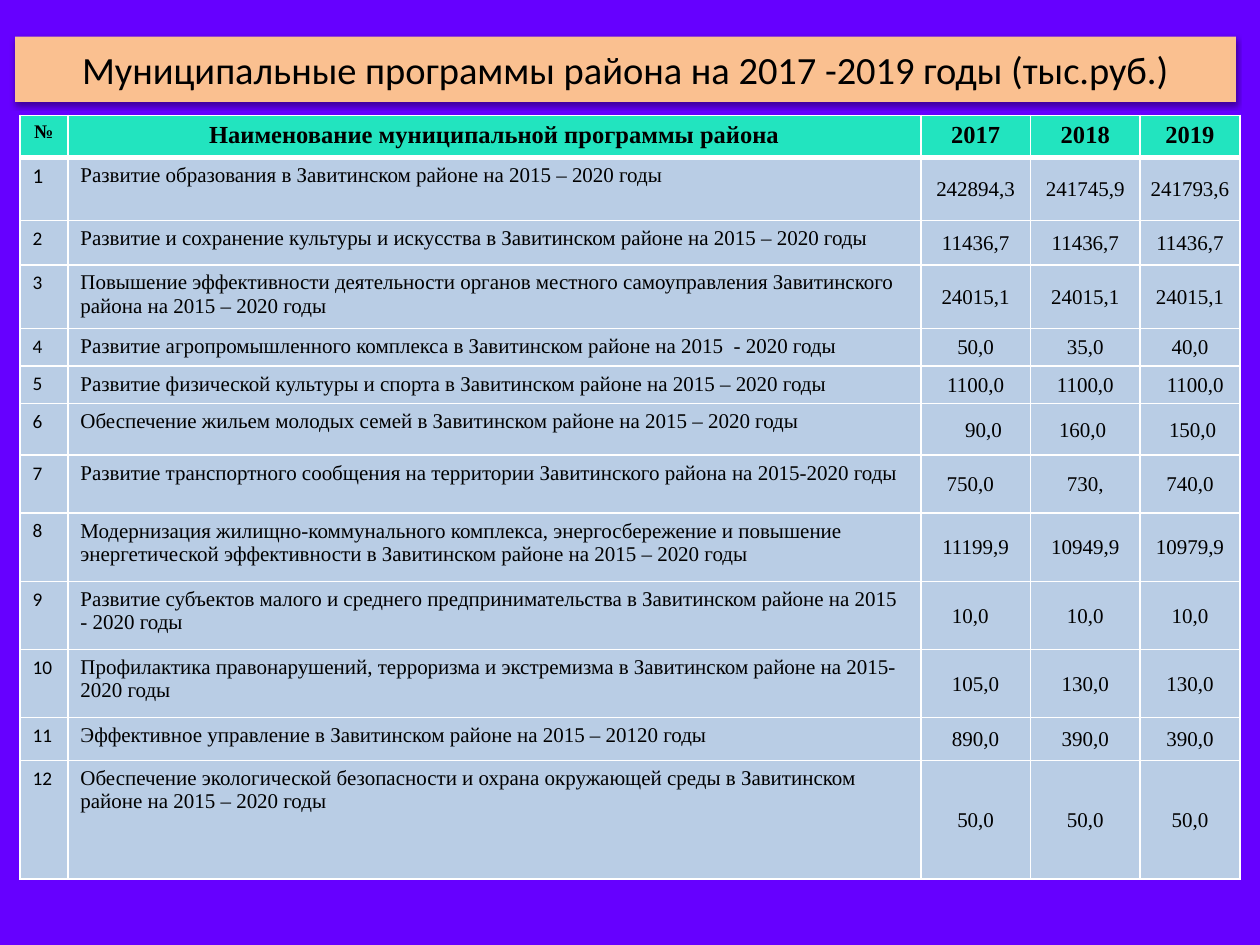
from dataclasses import dataclass

from lxml import etree
from pptx import Presentation
from pptx.dml.color import RGBColor
from pptx.enum.text import MSO_ANCHOR, MSO_AUTO_SIZE, PP_ALIGN
from pptx.oxml.ns import qn
from pptx.util import Pt

LEFT, CENTER = PP_ALIGN.LEFT, PP_ALIGN.CENTER
TOP, MIDDLE = MSO_ANCHOR.TOP, MSO_ANCHOR.MIDDLE
FIXED_SIZE = MSO_AUTO_SIZE.NONE

VIOLET = RGBColor(0x66, 0x00, 0xFF)
PEACH = RGBColor(0xFA, 0xC0, 0x90)
TURQUOISE = RGBColor(0x22, 0xE4, 0xBF)
PALE_BLUE = RGBColor(0xB9, 0xCD, 0xE5)
BLACK = RGBColor(0x00, 0x00, 0x00)
WHITE = RGBColor(0xFF, 0xFF, 0xFF)

SANS, SERIF = "Calibri", "Times New Roman"
THIN, THICK = 1, 3
AMOUNT_INSET = 0.72
COLUMN_WIDTHS = (27.4, 487.4, 62.7, 62.7, 57)
HEADER_HEIGHT = 24
TITLE = "Муниципальные программы района на 2017 -2019 годы (тыс.руб.)"
HEADINGS = ("№", "Наименование муниципальной программы района", "2017", "2018", "2019")


@dataclass(frozen=True)
class Program:
    name: str
    amounts: tuple[str, str, str]
    height: float
    shifts: tuple[float, float, float] = (0, 0, 0)  # offset of each amount from centre
    number_size: float = 11


PROGRAMS = (
    Program("Развитие образования в Завитинском районе на 2015 – 2020 годы",
            ("242894,3", "241745,9", "241793,6"), 36, number_size=12),
    Program("Развитие и сохранение культуры и искусства в Завитинском районе на 2015 – 2020 годы",
            ("11436,7", "11436,7", "11436,7"), 25.4),
    Program("Повышение эффективности деятельности органов местного самоуправления "
            "Завитинского района на 2015 – 2020 годы",
            ("24015,1", "24015,1", "24015,1"), 36.2),
    Program("Развитие агропромышленного комплекса в Завитинском районе на 2015  - 2020 годы",
            ("50,0", "35,0", "40,0"), 21.6),
    Program("Развитие физической культуры и спорта в Завитинском районе на 2015 – 2020 годы",
            ("1100,0", "1100,0", "1100,0"), 21.4, (0, 0, 3)),
    Program("Обеспечение жильем молодых семей в Завитинском районе на 2015 – 2020 годы",
            ("90,0", "160,0", "150,0"), 29.6, (4.5, -1.5, 1.5)),
    Program("Развитие транспортного сообщения на территории Завитинского района на 2015-2020 годы",
            ("750,0", "730,", "740,0"), 33.1, (-3, 0, 0)),
    Program("Модернизация жилищно-коммунального комплекса, энергосбережение и повышение "
            "энергетической эффективности в Завитинском районе на 2015 – 2020 годы",
            ("11199,9", "10949,9", "10979,9"), 39),
    Program("Развитие субъектов малого и среднего предпринимательства в Завитинском районе "
            "на 2015 - 2020 годы",
            ("10,0", "10,0", "10,0"), 39, (-3, 0, 0)),
    Program("Профилактика правонарушений, терроризма и экстремизма в Завитинском районе "
            "на 2015-2020 годы",
            ("105,0", "130,0", "130,0"), 39),
    Program("Эффективное управление в Завитинском районе на 2015 – 20120 годы",
            ("890,0", "390,0", "390,0"), 24.3),
    Program("Обеспечение экологической безопасности и охрана окружающей среды "
            "в Завитинском районе на 2015 – 2020 годы",
            ("50,0", "50,0", "50,0"), 68),
)


def apply_format(target, values: dict) -> None:
    for attribute, value in values.items():
        setattr(target, attribute, value)


def write_text(frame, text: str, align, font_name: str, size: float, bold: bool = False) -> None:
    paragraph = frame.paragraphs[0]
    paragraph.alignment = align
    run = paragraph.add_run()
    run.text = text
    apply_format(run.font, {"name": font_name, "size": Pt(size), "bold": bold})
    run.font.color.rgb = BLACK


def add_color(parent, color: RGBColor):
    return etree.SubElement(parent, qn("a:srgbClr"), val=str(color))


def draw_title(slide) -> None:
    title = slide.shapes.title
    apply_format(title, {"left": Pt(8.6), "top": Pt(20.9), "width": Pt(697.7), "height": Pt(37.4)})
    properties = title.element.spPr
    outline = etree.SubElement(properties, qn("a:prstGeom"), prst="roundRect")
    etree.SubElement(outline, qn("a:avLst"))
    title.fill.solid()
    title.fill.fore_color.rgb = PEACH
    effects = etree.SubElement(properties, qn("a:effectLst"))
    shadow = etree.SubElement(effects, qn("a:outerShdw"), blurRad=str(Pt(3.1)),
                              dist=str(Pt(1.6)), dir="5400000", rotWithShape="0")
    etree.SubElement(add_color(shadow, BLACK), qn("a:alpha"), val="38000")
    apply_format(title.text_frame, {"word_wrap": True, "auto_size": FIXED_SIZE,
                                    "vertical_anchor": MIDDLE})
    write_text(title.text_frame, TITLE, CENTER, SANS, 22)


def style_cell(cell, color: RGBColor, top: float = THIN, bottom: float = THIN) -> None:
    """Draw the white cell borders, then fill the cell."""
    properties = cell._tc.get_or_add_tcPr()
    for side, width in {"L": THIN, "R": THIN, "T": top, "B": bottom}.items():
        border = etree.SubElement(properties, qn(f"a:ln{side}"), w=str(Pt(width)))
        add_color(etree.SubElement(border, qn("a:solidFill")), WHITE)
    cell.fill.solid()
    cell.fill.fore_color.rgb = color


def fill_header(table) -> None:
    table.rows[0].height = Pt(HEADER_HEIGHT)
    for column, heading in enumerate(HEADINGS):
        cell = table.cell(0, column)
        style_cell(cell, TURQUOISE, bottom=THICK)
        write_text(cell.text_frame, heading, CENTER, SERIF, 14 if column else 11, bold=True)


def write_amount(cell, amount: str, shift: float) -> None:
    apply_format(cell, {
        "vertical_anchor": MIDDLE,
        "margin_left": Pt(AMOUNT_INSET + 2 * max(shift, 0)),
        "margin_right": Pt(AMOUNT_INSET + 2 * max(-shift, 0)),
        "margin_top": Pt(AMOUNT_INSET),
        "margin_bottom": Pt(0),
    })
    write_text(cell.text_frame, amount, CENTER, SERIF, 12)


def fill_program(table, number: int, program: Program) -> None:
    row = table.rows[number]
    row.height = Pt(program.height)
    for cell in row.cells:
        cell.vertical_anchor = TOP
        style_cell(cell, PALE_BLUE, top=THICK if number == 1 else THIN)
    number_cell, name_cell, *amount_cells = row.cells
    write_text(number_cell.text_frame, str(number), LEFT, SANS, program.number_size)
    write_text(name_cell.text_frame, program.name, LEFT, SERIF, 12)
    for cell, amount, shift in zip(amount_cells, program.amounts, program.shifts):
        write_amount(cell, amount, shift)


def draw_programs(slide) -> None:
    height = HEADER_HEIGHT + sum(program.height for program in PROGRAMS)
    table = slide.shapes.add_table(len(PROGRAMS) + 1, len(HEADINGS), Pt(11.4), Pt(66),
                                   Pt(sum(COLUMN_WIDTHS)), Pt(height)).table
    table.horz_banding = False
    for column, width in zip(table.columns, COLUMN_WIDTHS):
        column.width = Pt(width)
    fill_header(table)
    for number, program in enumerate(PROGRAMS, start=1):
        fill_program(table, number, program)


def main() -> None:
    presentation = Presentation()
    apply_format(presentation, {"slide_width": Pt(720), "slide_height": Pt(540)})
    title_only = presentation.slide_layouts[5]
    slide = presentation.slides.add_slide(title_only)
    slide.background.fill.solid()
    slide.background.fill.fore_color.rgb = VIOLET
    draw_title(slide)
    draw_programs(slide)
    presentation.save("out.pptx")


if __name__ == "__main__":
    main()
